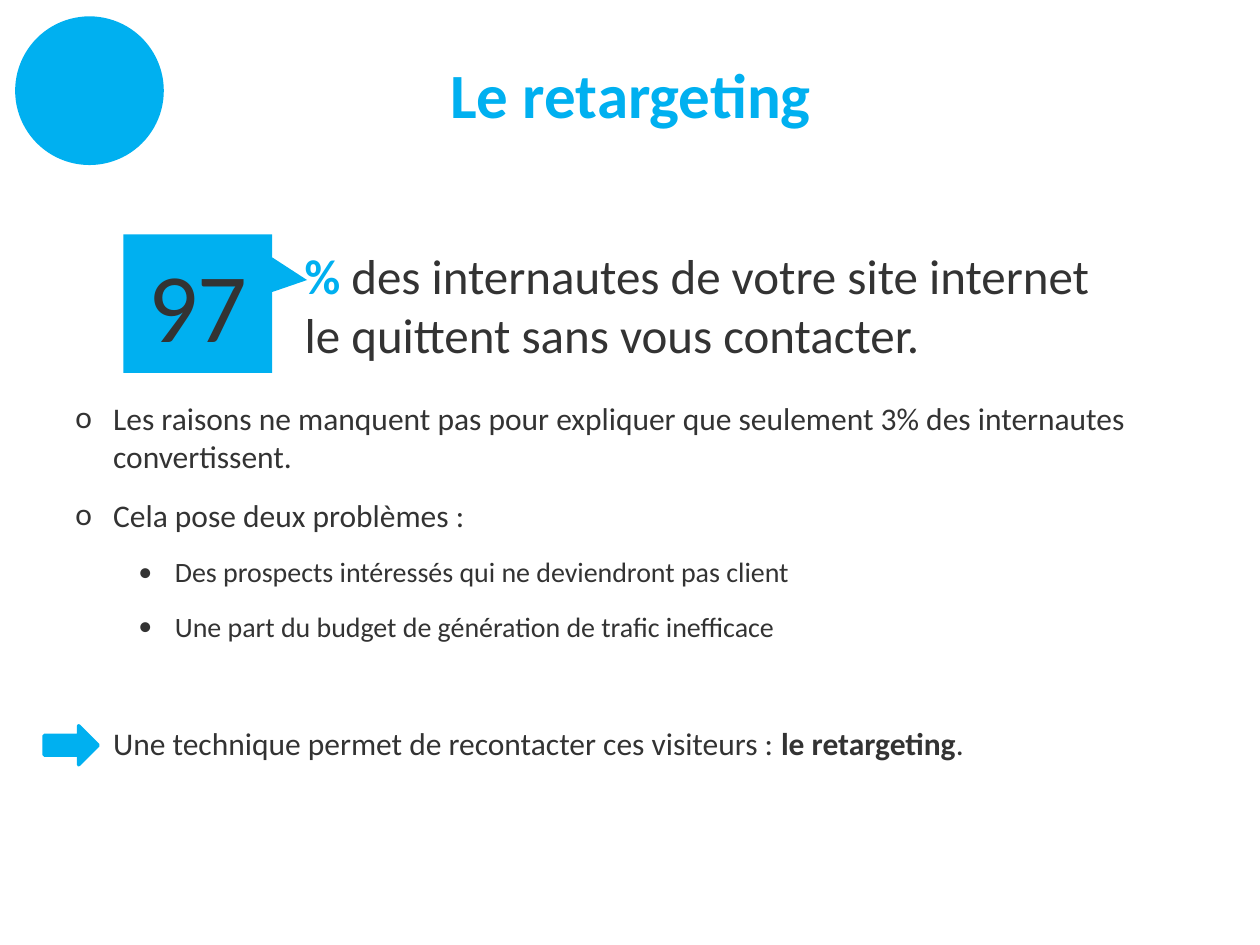
from lxml import etree
from pptx import Presentation
from pptx import util as u
from pptx.dml.color import RGBColor
from pptx.enum import shapes, text
from pptx.oxml import ns

COLORS = {"blue": "00B0F0", "dark": "333333"}
FONT = "Calibri"


def color(name):
    return RGBColor.from_string(COLORS[name])


def box(left, top, width, height):
    return [u.Inches(value) for value in (left, top, width, height)]


def add_run(paragraph, words, size, color_name="dark", bold=False):
    run = paragraph.add_run()
    run.text = words
    run.font.name = FONT
    run.font.size = u.Pt(size)
    run.font.bold = bold
    run.font.color.rgb = color(color_name)


def add_text_box(slide, *place):
    frame = slide.shapes.add_textbox(*box(*place)).text_frame
    frame.word_wrap = True
    return frame


def add_blue_shape(slide, kind, *place):
    shape = slide.shapes.add_shape(kind, *box(*place))
    shape.shadow.inherit = False
    shape.fill.solid()
    shape.fill.fore_color.rgb = color("blue")
    shape.line.fill.background()
    return shape


def add_centred_text(frame, words, size, color_name="dark", bold=False):
    frame.vertical_anchor = text.MSO_ANCHOR.MIDDLE
    paragraph = frame.paragraphs[0]
    paragraph.alignment = text.PP_ALIGN.CENTER
    add_run(paragraph, words, size, color_name, bold)


def set_indent(paragraph, left, hanging, bullet=None):
    properties = paragraph._p.get_or_add_pPr()
    properties.set("marL", str(u.Inches(left)))
    properties.set("indent", str(-u.Inches(hanging)))
    if bullet:
        etree.SubElement(properties, ns.qn("a:buFont")).set("typeface", FONT)
        etree.SubElement(properties, ns.qn("a:buChar")).set("char", bullet)


def add_title(slide):
    title = slide.shapes.title
    title.left, title.top, title.width, title.height = box(1.46, 0.23, 7.09, 1.02)
    add_centred_text(title.text_frame, "Le retargeting", 36, "blue", True)


def add_body(slide):
    main_point = (0.3, 0.3, "o")
    sub_point = (0.79, 0.29, "•")
    items = [
        (main_point, 18, 0, [("Les raisons ne manquent pas pour expliquer que seulement 3% des internautes convertissent.", False)]),
        (main_point, 18, 6, [("Cela pose deux problèmes :", False)]),
        (sub_point, 16, 6, [("Des prospects intéressés qui ne deviendront pas client", False)]),
        (sub_point, 16, 6, [("Une part du budget de génération de trafic inefficace", False)]),
        ((0.3, 0), 18, 40, [
            ("Une technique permet de recontacter ces visiteurs : ", False),
            ("le retargeting", True),
            (".", False),
        ]),
    ]
    frame = add_text_box(slide, 0.5, 3.12, 9, 3.58)
    for index, (indent, size, before, runs) in enumerate(items):
        paragraph = frame.add_paragraph() if index else frame.paragraphs[0]
        paragraph.space_before = u.Pt(before)
        paragraph.space_after = u.Pt(6)
        set_indent(paragraph, *indent)
        for words, bold in runs:
            add_run(paragraph, words, size, bold=bold)


def add_statistic(slide):
    paragraph = add_text_box(slide, 2.32, 1.9, 6.77, 1.02).paragraphs[0]
    add_run(paragraph, "% ", 28, "blue", True)
    add_run(paragraph, "des internautes de votre site internet le quittent sans vous contacter.", 28)
    callout = add_blue_shape(slide, shapes.MSO_SHAPE.RECTANGULAR_CALLOUT, 0.98, 1.86, 1.18, 1.1)
    callout.adjustments[0] = 0.735
    callout.adjustments[1] = -0.17
    frame = callout.text_frame
    frame.margin_left = frame.margin_right = u.Inches(0.08)
    frame.margin_top = frame.margin_bottom = u.Inches(0.04)
    add_centred_text(frame, "97", 56)


def add_arrow(slide):
    arrow = add_blue_shape(slide, shapes.MSO_SHAPE.RIGHT_ARROW, 0.35, 5.76, 0.43, 0.31)
    arrow.line.color.rgb = color("blue")
    arrow.line.width = u.Pt(2)
    etree.SubElement(arrow.line._get_or_add_ln(), ns.qn("a:round"))


def main():
    presentation = Presentation()
    presentation.slide_width = u.Inches(10)
    presentation.slide_height = u.Inches(7.5)
    slide = presentation.slides.add_slide(presentation.slide_layouts[5])
    add_title(slide)
    add_body(slide)
    add_statistic(slide)
    add_arrow(slide)
    add_blue_shape(slide, shapes.MSO_SHAPE.OVAL, 0.12, 0.13, 1.18, 1.18)
    presentation.save("out.pptx")


if __name__ == "__main__":
    main()
